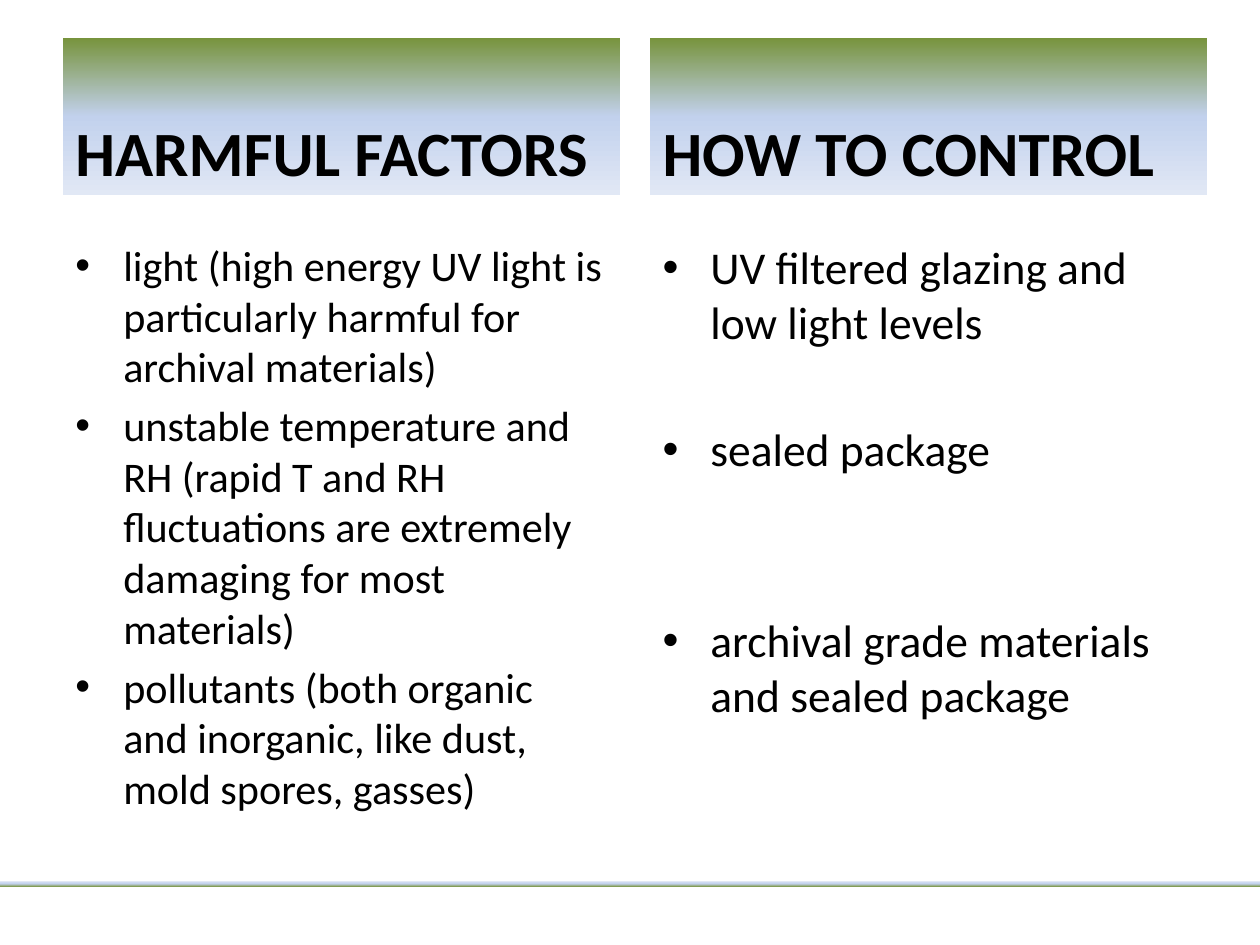
from lxml.etree import SubElement
from pptx import Presentation
from pptx.dml.color import RGBColor
from pptx.enum.shapes import MSO_SHAPE
from pptx.enum.text import MSO_ANCHOR, PP_ALIGN
from pptx.oxml.ns import qn
from pptx.util import Inches, Pt

COLORS = {"green": "77933C", "blue": "C2D1ED", "pale": "E1E8F5", "text": "000000"}
GRADIENT_STOPS = [(0, "green"), (50, "blue"), (100, "pale")]
HEADING_FONT = {"name": "Calibri", "size": Pt(36), "bold": True}

LEFT, COLUMN_WIDTH, COLUMN_STEP = 0.5, 4.42, 4.66
HEADING_TOP, HEADING_HEIGHT = 0.3, 1.25
LIST_TOP, LIST_HEIGHT = 1.85, 4.32
BULLET_INDENT = 0.38

# Each column: heading, text size, list of (item, space before in points)
COLUMNS = [
    ("HARMFUL FACTORS", 24.1, [
        ("light (high energy UV light is particularly harmful for archival materials)", 0),
        ("unstable temperature and RH (rapid T and RH fluctuations are extremely "
         "damaging for most materials)", 4.8),
        ("pollutants (both organic and inorganic, like dust, mold spores, gasses)", 4.8),
    ]),
    ("HOW TO CONTROL", 26, [
        ("UV filtered glazing and low light levels", 0),
        ("sealed package", 41.5),
        ("archival grade materials and sealed package", 78),
    ]),
]


def format_font(font, values):
    for key, value in values.items():
        setattr(font, key, value)
    font.color.rgb = RGBColor.from_string(COLORS["text"])


def add_gradient_bar(slide, box, angle):
    """Add a rectangle whose three-stop gradient runs clockwise at angle."""
    bar = slide.shapes.add_shape(MSO_SHAPE.RECTANGLE, *map(Inches, box))
    bar.shadow.inherit = False
    bar.line.fill.background()
    bar.fill.gradient()
    gradient = bar.fill._xPr.find(qn("a:gradFill"))
    stops = gradient.find(qn("a:gsLst"))
    for old_stop in list(stops):
        stops.remove(old_stop)
    for percent, color in GRADIENT_STOPS:
        stop = SubElement(stops, qn("a:gs"), pos=str(percent * 1000))
        SubElement(stop, qn("a:srgbClr"), val=COLORS[color])
    gradient.find(qn("a:lin")).set("ang", str(angle * 60000))
    return bar


def add_heading(slide, box, heading):
    frame = add_gradient_bar(slide, box, 90).text_frame
    frame.word_wrap = True
    frame.vertical_anchor = MSO_ANCHOR.BOTTOM
    paragraph = frame.paragraphs[0]
    paragraph.text = heading
    paragraph.alignment = PP_ALIGN.LEFT
    format_font(paragraph.runs[0].font, HEADING_FONT)


def add_bullet_list(slide, box, items, size):
    frame = slide.shapes.add_textbox(*map(Inches, box)).text_frame
    frame.word_wrap = True
    for index, (item, space_before) in enumerate(items):
        paragraph = frame.add_paragraph() if index else frame.paragraphs[0]
        paragraph.text = item
        paragraph.space_before = Pt(space_before)
        format_font(paragraph.runs[0].font, {"name": "Calibri", "size": Pt(size)})
        properties = paragraph._p.get_or_add_pPr()
        properties.set("marL", str(Inches(BULLET_INDENT)))
        properties.set("indent", str(-Inches(BULLET_INDENT)))
        SubElement(properties, qn("a:buFont"), typeface="Arial")
        SubElement(properties, qn("a:buChar"), char="•")


def main():
    presentation = Presentation()
    presentation.slide_width, presentation.slide_height = Inches(10), Inches(7.5)
    slide = presentation.slides.add_slide(presentation.slide_layouts[6])
    for index, (heading, size, items) in enumerate(COLUMNS):
        left = LEFT + index * COLUMN_STEP
        add_heading(slide, (left, HEADING_TOP, COLUMN_WIDTH, HEADING_HEIGHT), heading)
        add_bullet_list(slide, (left, LIST_TOP, COLUMN_WIDTH, LIST_HEIGHT), items, size)
    add_gradient_bar(slide, (0, 6.99, 10, 0.05), 270)
    presentation.save("out.pptx")


if __name__ == "__main__":
    main()
